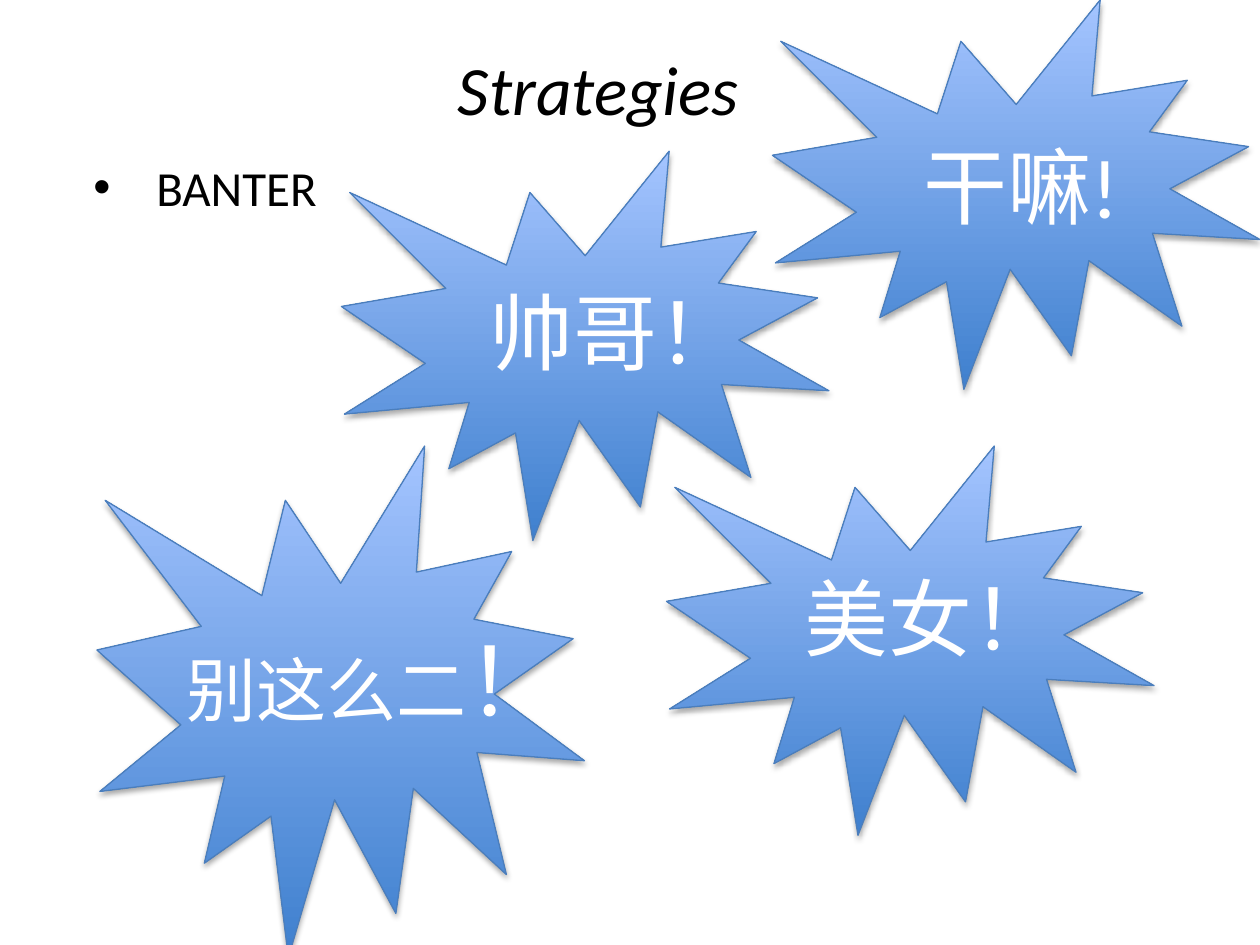
from lxml.etree import SubElement
from pptx import Presentation
from pptx.dml.color import RGBColor
from pptx.enum.shapes import MSO_SHAPE
from pptx.enum.text import MSO_ANCHOR, MSO_AUTO_SIZE, PP_ALIGN
from pptx.oxml.ns import qn
from pptx.util import Pt

FONT = "Calibri"
BLACK = RGBColor(0x00, 0x00, 0x00)
WHITE = RGBColor(0xFF, 0xFF, 0xFF)
DEEP_BLUE = RGBColor(0x3F, 0x80, 0xCE)
PALE_BLUE = RGBColor(0xA4, 0xC4, 0xFF)
EDGE_BLUE = RGBColor(0x4B, 0x7E, 0xBC)

TITLE = "Strategies"
STRATEGY = "BANTER"
BURST_WIDTH = 278.6

# burst left, top, height; phrase left, top, width, height; runs of (text, size)
BANTER = [
    ((441.4, 0, 222.5), (520.6, 73.4, 124.6, 65.5), [("干嘛!", 48)]),
    ((195.1, 86.4, 222.5), (272.9, 157, 159.8, 65.5), [("帅哥！", 48)]),
    ((380.9, 254.9, 222.5), (452.9, 320.4, 159.8, 65.5), [("美女！", 48)]),
    ((55.4, 254.9, 292.3), (99.4, 352.1, 230.4, 72.7), [("别这么二", 40), ("！", 54)]),
]


def place(shape, left, top, width, height):
    shape.left, shape.top = Pt(left), Pt(top)
    shape.width, shape.height = Pt(width), Pt(height)


def add_run(paragraph, text, size, color, italic=None):
    run = paragraph.add_run()
    run.text = text
    run.font.name = FONT
    run.font.size = Pt(size)
    run.font.color.rgb = color
    run.font.italic = italic


def add_drop_shadow(shape):
    shape.shadow.inherit = False
    effects = shape._element.spPr.find(qn("a:effectLst"))
    shadow = SubElement(effects, qn("a:outerShdw"), blurRad=str(Pt(3.1)),
                        dist=str(Pt(1.8)), dir="5400000", rotWithShape="0")
    color = SubElement(shadow, qn("a:srgbClr"), val="000000")
    SubElement(color, qn("a:alpha"), val="35000")


def add_burst(slide, left, top, height):
    burst = slide.shapes.add_shape(MSO_SHAPE.EXPLOSION1, Pt(left), Pt(top),
                                   Pt(BURST_WIDTH), Pt(height))
    burst.fill.gradient()
    burst.fill.gradient_angle = 90
    for stop, color in zip(burst.fill.gradient_stops, (DEEP_BLUE, PALE_BLUE)):
        stop.color.rgb = color
    burst.line.color.rgb = EDGE_BLUE
    burst.line.width = Pt(0.75)
    add_drop_shadow(burst)


def add_phrase(slide, box, runs):
    phrase = slide.shapes.add_textbox(*map(Pt, box))
    frame = phrase.text_frame
    frame.word_wrap = False
    frame.auto_size = MSO_AUTO_SIZE.SHAPE_TO_FIT_TEXT
    for text, size in runs:
        add_run(frame.paragraphs[0], text, size, WHITE)


def main():
    prs = Presentation()
    prs.slide_width, prs.slide_height = Pt(720), Pt(540)
    slide = prs.slides.add_slide(prs.slide_layouts[1])

    title = slide.shapes.title
    place(title, 46.1, 28.8, 591.8, 43.2)
    title.text_frame.vertical_anchor = MSO_ANCHOR.MIDDLE
    heading = title.text_frame.paragraphs[0]
    heading.alignment = PP_ALIGN.CENTER
    add_run(heading, TITLE, 39.6, BLACK, italic=True)

    strategies = slide.placeholders[1]
    place(strategies, 46.1, 86.4, 168.5, 51.8)
    item = strategies.text_frame.paragraphs[0]
    add_run(item, STRATEGY, 28, BLACK)
    properties = item._p.get_or_add_pPr()
    properties.set("marL", str(Pt(36)))
    properties.set("indent", str(Pt(-36)))
    SubElement(properties, qn("a:buFont"), typeface="Arial")
    SubElement(properties, qn("a:buChar"), char="•")

    for burst, box, runs in BANTER:
        add_burst(slide, *burst)
        add_phrase(slide, box, runs)

    prs.save("out.pptx")


if __name__ == "__main__":
    main()
